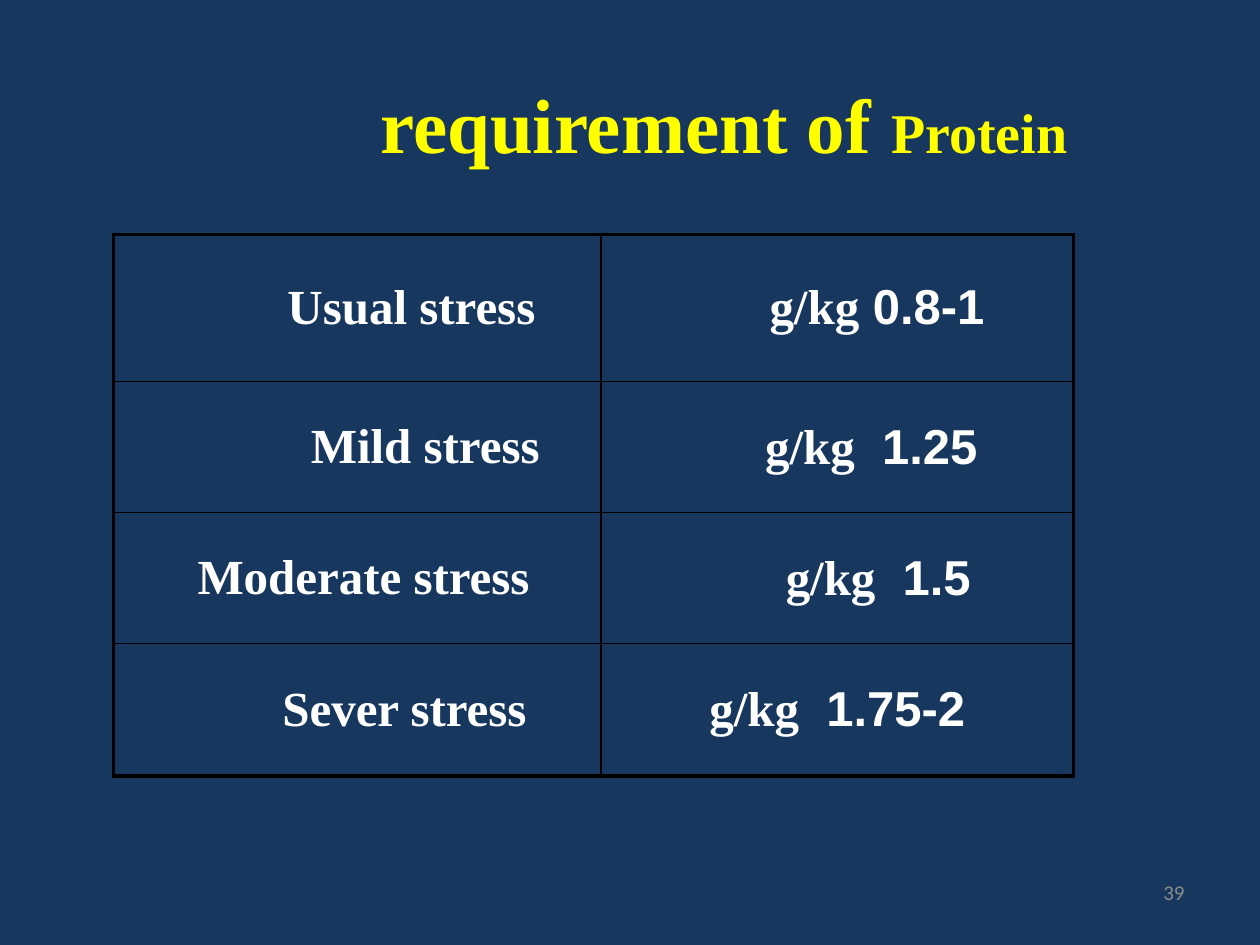
from pptx import Presentation
from pptx.dml.color import RGBColor
from pptx.enum.text import MSO_ANCHOR, PP_ALIGN
from pptx.oxml.ns import qn
from pptx.util import Inches, Pt
from lxml.etree import SubElement


def add_text(paragraph, text, size, color, font="Times New Roman", bold=True):
    run = paragraph.add_run()
    run.text = text
    run.font.size = Pt(size)
    run.font.name = font
    run.font.bold = bold
    run.font.color.rgb = RGBColor.from_string(color)
    return run


def add_border(cell, side, width):
    line = SubElement(cell._tc.get_or_add_tcPr(), qn(f"a:ln{side}"), w=str(Pt(width)))
    fill = SubElement(line, qn("a:solidFill"))
    SubElement(fill, qn("a:srgbClr"), val="000000")


presentation = Presentation()
presentation.slide_width = Inches(10)
presentation.slide_height = Inches(7.5)
slide = presentation.slides.add_slide(presentation.slide_layouts[6])
slide.background.fill.solid()
slide.background.fill.fore_color.rgb = RGBColor.from_string("17375E")

# Title
title = slide.shapes.add_textbox(Inches(1.95), Inches(0.39), Inches(7.59), Inches(1.17))
title.text_frame.word_wrap = True
title.text_frame.vertical_anchor = MSO_ANCHOR.MIDDLE
paragraph = title.text_frame.paragraphs[0]
paragraph.alignment = PP_ALIGN.CENTER
add_text(paragraph, "requirement of ", 44, "FFFF00")
add_text(paragraph, "Protein", 32, "FFFF00")

# Protein table: each cell holds its text and left margin
rows = [
    [("Usual stress", 0.86), ("0.8-1 g/kg", 0.63)],
    [("Mild stress", 1.08), ("1.25  g/kg", 0.54)],
    [("Moderate stress", 0.1), ("1.5  g/kg", 0.65)],
    [("Sever stress", 0.75), ("1.75-2  g/kg", 0)],
]
column_widths = [3.87, 3.75]
row_heights = [1.17, 1.04, 1.04, 1.05]
table = slide.shapes.add_table(
    len(rows), len(column_widths), Inches(0.9), Inches(1.86),
    Inches(sum(column_widths)), Inches(sum(row_heights))).table
table.first_row = False
table.horz_banding = False
for column, width in zip(table.columns, column_widths):
    column.width = Inches(width)
for row, height in zip(table.rows, row_heights):
    row.height = Inches(height)

last_row, last_column = len(rows) - 1, len(column_widths) - 1
for row_index, row in enumerate(rows):
    for column_index, (text, left_margin) in enumerate(row):
        cell = table.cell(row_index, column_index)
        cell.margin_left = Inches(left_margin)
        cell.margin_right = cell.margin_top = cell.margin_bottom = 0
        cell.vertical_anchor = MSO_ANCHOR.MIDDLE

        # Thick outer edges, thin inner edges
        outer_edges = {
            "L": column_index == 0,
            "R": column_index == last_column,
            "T": row_index == 0,
            "B": row_index == last_row,
        }
        for side, is_outer in outer_edges.items():
            add_border(cell, side, 2.25 if is_outer else 1)
        cell.fill.background()

        # Right-to-left text, with digits in the complex-script font
        paragraph = cell.text_frame.paragraphs[0]
        paragraph.alignment = PP_ALIGN.CENTER
        paragraph._p.get_or_add_pPr().set("rtl", "1")
        run = add_text(paragraph, text, 28, "FFFFFF")
        SubElement(run._r.get_or_add_rPr(), qn("a:cs"), typeface="Arial")

# Slide number
number = slide.shapes.add_textbox(Inches(7.17), Inches(6.83), Inches(2.33), Inches(0.5))
number.text_frame.word_wrap = True
number.text_frame.vertical_anchor = MSO_ANCHOR.MIDDLE
paragraph = number.text_frame.paragraphs[0]
paragraph.alignment = PP_ALIGN.RIGHT
add_text(paragraph, "39", 12, "8C8C8C", "Calibri", False)

presentation.save("out.pptx")
